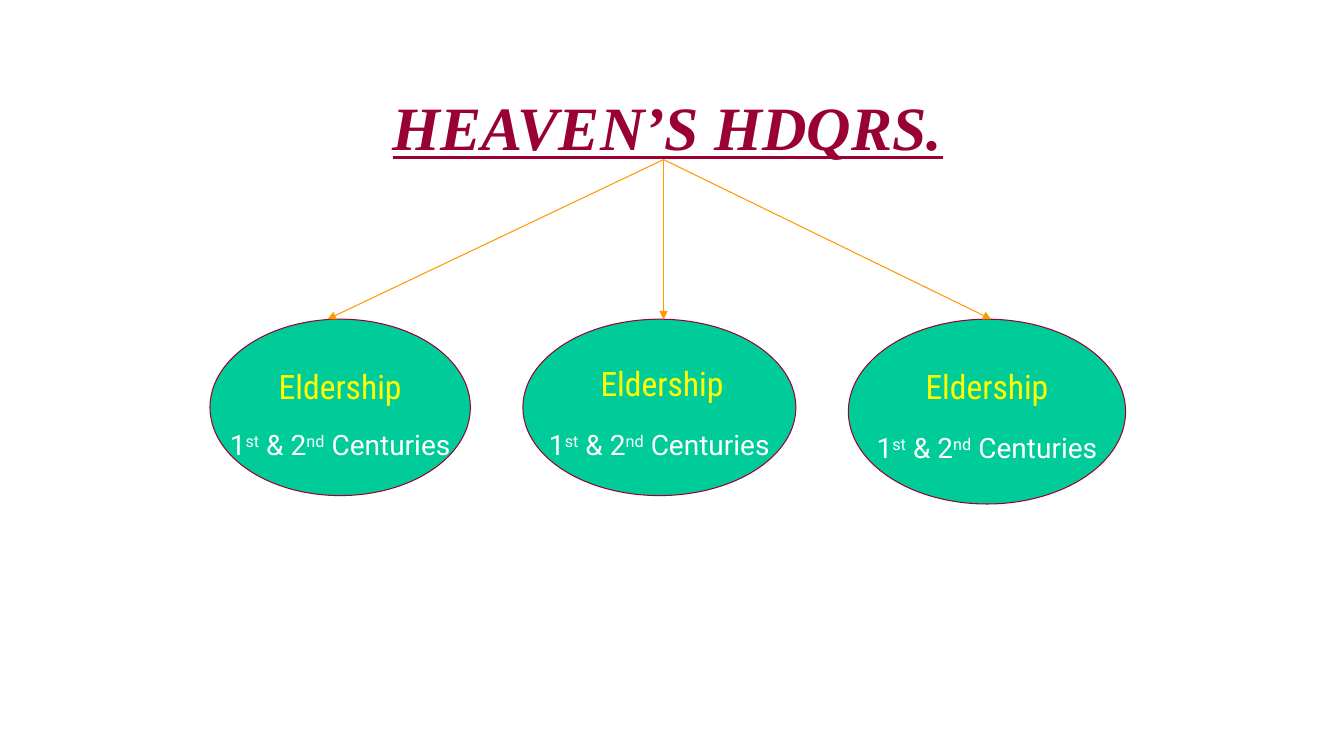
"""Build the slide showing Heaven's headquarters above three elderships."""
import pptx
import pptx.util
import pptx.dml.color
import pptx.enum.shapes
import pptx.enum.text
import pptx.oxml.ns
import lxml.etree

PX = 9525
COLORS = {"heading": "990033", "oval": "00CC99", "eldership": "FFFF00",
          "period": "FFFFFF", "arrow": "FF9900"}
FORMATS = {
    "heading": {"name": "Times New Roman", "size": pptx.util.Pt(44),
                "bold": True, "italic": True, "underline": True},
    "eldership": {"name": "Roboto Condensed", "size": pptx.util.Pt(24)},
    "period": {"name": "Roboto", "size": pptx.util.Pt(20)},
}
PERIOD = [("1", False), ("st", True), (" & 2", False), ("nd", True), (" Centuries", False)]
CONGREGATIONS = [
    {"oval": (200, 304, 248, 168), "label": (224, 344, 200, 40), "inset": 8, "tip": 312},
    {"oval": (498, 304, 260, 168), "label": (528, 341, 205, 43), "inset": 8, "tip": 632},
    {"oval": (808, 304, 264, 176), "label": (832, 344, 216, 40), "inset": 12, "tip": 944},
]
ARROW_START = (632, 152)
ARROW_END_Y = 304


def rgb(part):
    return pptx.dml.color.RGBColor.from_string(COLORS[part])


def add_text(paragraph, text, part):
    paragraph.alignment = pptx.enum.text.PP_ALIGN.CENTER
    run = paragraph.add_run()
    run.text = text
    for attribute, value in FORMATS[part].items():
        setattr(run.font, attribute, value)
    run.font.color.rgb = rgb(part)
    return run


deck = pptx.Presentation()
deck.slide_width, deck.slide_height = 1280 * PX, 720 * PX
slide = deck.slides.add_slide(deck.slide_layouts[5])

heading = slide.shapes.title
heading.left, heading.top, heading.width, heading.height = (v * PX for v in (232, 56, 808, 128))
heading.text_frame.vertical_anchor = pptx.enum.text.MSO_ANCHOR.MIDDLE
add_text(heading.text_frame.paragraphs[0], "HEAVEN’S HDQRS.", "heading")

for congregation in CONGREGATIONS:
    oval = slide.shapes.add_shape(pptx.enum.shapes.MSO_SHAPE.OVAL,
                                  *(v * PX for v in congregation["oval"]))
    oval.shadow.inherit = False
    oval.fill.solid()
    oval.fill.fore_color.rgb = rgb("oval")
    oval.line.color.rgb = rgb("heading")
    oval.line.width = pptx.util.Pt(0.75)
    period = oval.text_frame
    period.word_wrap = False
    period.vertical_anchor = pptx.enum.text.MSO_ANCHOR.BOTTOM
    period.margin_bottom = congregation["inset"] * PX
    for text, raised in PERIOD:
        run = add_text(period.paragraphs[0], text, "period")
        if raised:
            run.font._element.set("baseline", "30000")

    label = slide.shapes.add_textbox(*(v * PX for v in congregation["label"]))
    label.text_frame.word_wrap = False
    add_text(label.text_frame.paragraphs[0], "Eldership", "eldership")

for congregation in CONGREGATIONS:
    ends = (*ARROW_START, congregation["tip"], ARROW_END_Y)
    arrow = slide.shapes.add_connector(pptx.enum.shapes.MSO_CONNECTOR.STRAIGHT,
                                       *(v * PX for v in ends))
    arrow.line.color.rgb = rgb("arrow")
    arrow.line.width = pptx.util.Pt(0.75)
    lxml.etree.SubElement(arrow.line._get_or_add_ln(),
                          pptx.oxml.ns.qn("a:tailEnd"), type="triangle")
    lxml.etree.SubElement(arrow._element.spPr, pptx.oxml.ns.qn("a:effectLst"))

deck.save("out.pptx")
